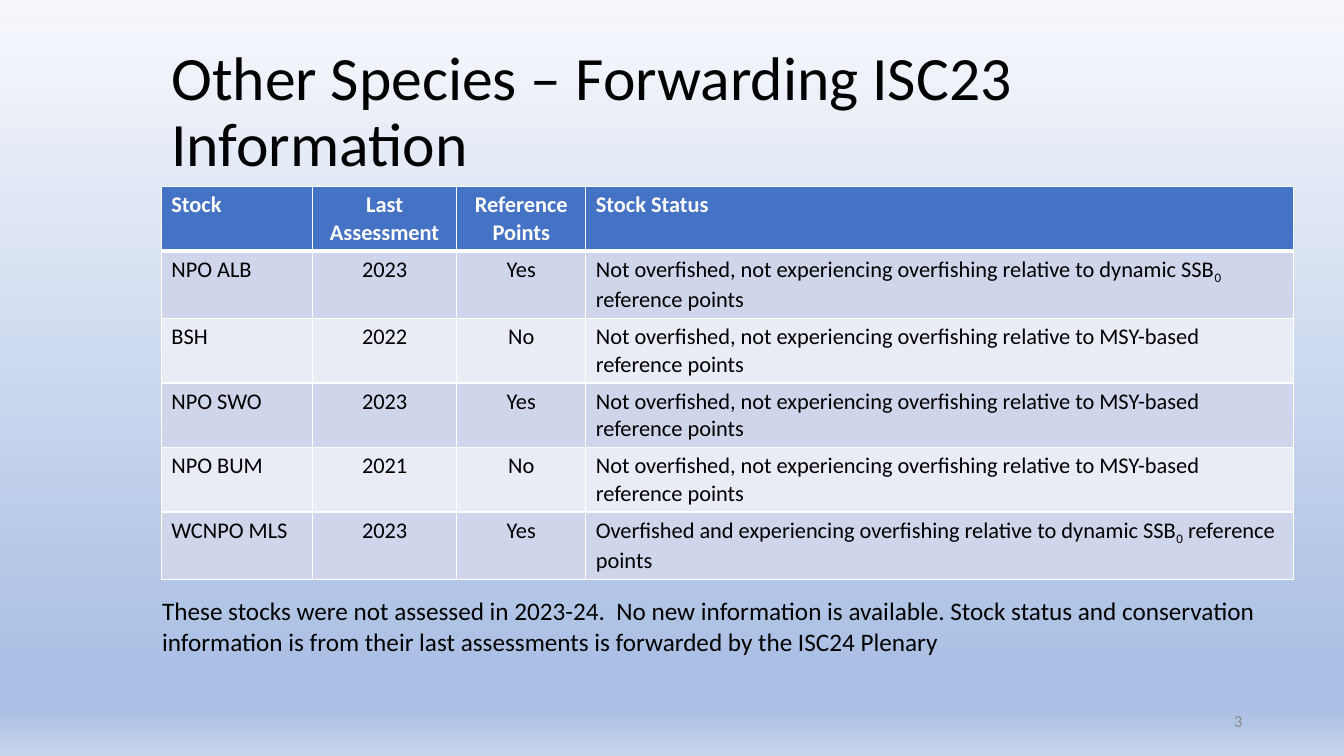
from pptx import Presentation
from pptx.dml.color import RGBColor
from pptx.enum.text import MSO_ANCHOR, PP_ALIGN
from pptx.oxml import parse_xml
from pptx.oxml.ns import nsdecls
from pptx.util import Inches, Pt

COLORS = {
    "black": "000000", "white": "FFFFFF", "gray": "8C8C8C",
    "header": "4472C4", "band_dark": "CFD5EA", "band_light": "E9EBF5",
}
BACKGROUND_STOPS = [(0, "F6F8FC"), (88, "ABC0E4"), (94, "ABC0E4"), (100, "C7D5ED")]


def write_text(frame, text, size, color="black", bold=False,
               align=PP_ALIGN.LEFT, anchor=MSO_ANCHOR.TOP, line_spacing=None):
    """Fill a text frame; parts between bars are set as subscripts."""
    frame.word_wrap = True
    frame.vertical_anchor = anchor
    para = frame.paragraphs[0]
    para.alignment = align
    para.line_spacing = line_spacing
    for index, part in enumerate(text.split("|")):
        span = para.add_run()
        span.text = part
        span.font.name = "Calibri"
        span.font.size = Pt(size)
        span.font.bold = bold
        span.font.color.rgb = RGBColor.from_string(COLORS[color])
        if index % 2:
            span.font._element.set("baseline", "-25000")


def add_border(cell, position, side, width):
    cell._tc.get_or_add_tcPr().insert(position, parse_xml(
        f'<a:{side} {nsdecls("a")} w="{Pt(width)}"><a:solidFill>'
        f'<a:srgbClr val="{COLORS["white"]}"/></a:solidFill></a:{side}>'))


deck = Presentation()
deck.slide_width, deck.slide_height = Inches(13.33), Inches(7.5)
page = deck.slides.add_slide(deck.slide_layouts[6])

# Background gradient, top to bottom
stops = "".join(f'<a:gs pos="{position * 1000}"><a:srgbClr val="{color}"/></a:gs>'
                for position, color in BACKGROUND_STOPS)
page._element.cSld.insert(0, parse_xml(
    f'<p:bg {nsdecls("p", "a")}><p:bgPr><a:gradFill rotWithShape="1">'
    f'<a:gsLst>{stops}</a:gsLst><a:lin ang="5400000" scaled="0"/></a:gradFill>'
    f'<a:effectLst/></p:bgPr></p:bg>'))

# Title, closing note and page number
title = page.shapes.add_textbox(Inches(1.6), Inches(0.4), Inches(11.55), Inches(1.45))
write_text(title.text_frame, "Other Species – Forwarding ISC23 Information", size=44,
           anchor=MSO_ANCHOR.MIDDLE, line_spacing=0.9)

note = page.shapes.add_textbox(Inches(1.51), Inches(5.86), Inches(11.23), Inches(0.71))
write_text(note.text_frame,
           "These stocks were not assessed in 2023-24.  No new information is available. "
           "Stock status and conservation information is from their last assessments "
           "is forwarded by the ISC24 Plenary", size=18)

number = page.shapes.add_textbox(Inches(9.42), Inches(6.95), Inches(3), Inches(0.4))
write_text(number.text_frame, "3", size=12, color="gray",
           align=PP_ALIGN.RIGHT, anchor=MSO_ANCHOR.MIDDLE)

# Stock status table
healthy = "Not overfished, not experiencing overfishing relative to "
msy_points = "MSY-based reference points"
ssb_points = "dynamic SSB|0| reference points"
rows = [
    ("Stock", "Last Assessment", "Reference Points", "Stock Status"),
    ("NPO ALB", "2023", "Yes", healthy + ssb_points),
    ("BSH", "2022", "No", healthy + msy_points),
    ("NPO SWO", "2023", "Yes", healthy + msy_points),
    ("NPO BUM", "2021", "No", healthy + msy_points),
    ("WCNPO MLS", "2023", "Yes",
     "Overfished and experiencing overfishing relative to " + ssb_points),
]
column_widths = [1.5, 1.43, 1.28, 7.02]
row_height = 0.64
table = page.shapes.add_table(
    len(rows), len(column_widths), Inches(1.6), Inches(1.85),
    Inches(sum(column_widths)), Inches(row_height * len(rows))).table
for column, width in zip(table.columns, column_widths):
    column.width = Inches(width)

for row_index, values in enumerate(rows):
    is_header = row_index == 0
    table.rows[row_index].height = Inches(row_height)
    if is_header:
        fill = "header"
    else:
        fill = "band_dark" if row_index % 2 else "band_light"
    for column_index, value in enumerate(values):
        cell = table.cell(row_index, column_index)
        cell.fill.solid()
        cell.fill.fore_color.rgb = RGBColor.from_string(COLORS[fill])
        write_text(cell.text_frame, value, size=16, bold=is_header,
                   color="white" if is_header else "black",
                   align=PP_ALIGN.CENTER if column_index in (1, 2) else PP_ALIGN.LEFT)
        # The line between header and body is thicker
        widths = {"lnL": 1, "lnR": 1, "lnT": 3 if row_index == 1 else 1,
                  "lnB": 3 if is_header else 1}
        for position, (side, width) in enumerate(widths.items()):
            add_border(cell, position, side, width)

deck.save("out.pptx")
